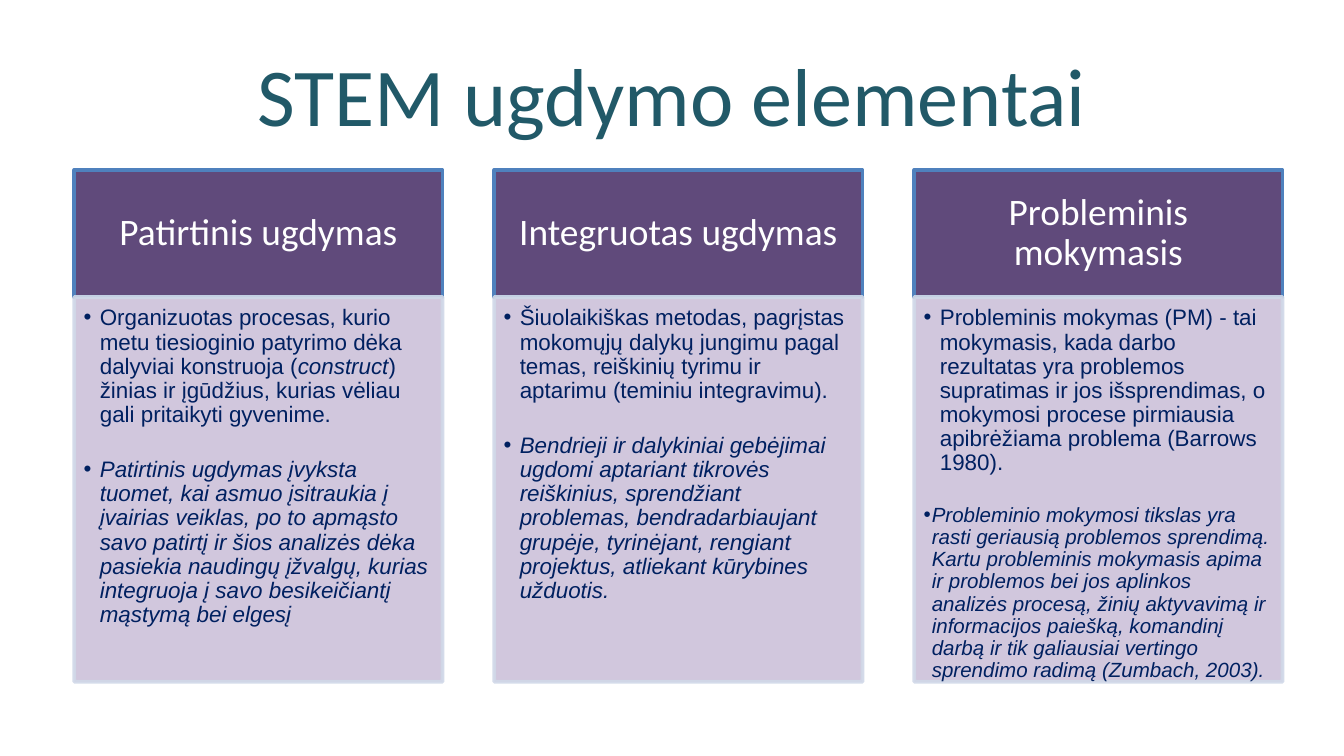
from dataclasses import dataclass

from lxml import etree
from pptx import Presentation
from pptx import util as u
from pptx.dml.color import RGBColor
from pptx.enum import shapes, text
from pptx.oxml.ns import qn


@dataclass(frozen=True)
class Theme:
    title: str = "215968"
    header: str = "604A7B"
    header_line: str = "4F81BD"
    header_text: str = "FFFFFF"
    panel: str = "CCC1DA"
    panel_line: str = "D0D8E8"
    panel_text: str = "002060"
    head_font: str = "Calibri"
    body_font: str = "Arial"
    title_size: int = 44
    header_size: int = 20
    line_width: int = 2
    line_spacing: float = 0.9
    panel_opacity: int = 90


@dataclass(frozen=True)
class Point:
    spans: tuple  # (words, italic) pairs
    size: int = 12
    indent: float = 0.12
    after: float = 0


class SlideBuilder:
    """Places styled elements, with lengths in percent of the slide."""

    def __init__(self, deck, theme):
        self.deck, self.theme = deck, theme
        self.slide = deck.slides.add_slide(deck.slide_layouts[5])

    def area(self, left, top, width, height):
        across, down = self.deck.slide_width, self.deck.slide_height
        return [round(share * side / 100) for share, side in
                ((left, across), (top, down), (width, across), (height, down))]

    def style(self, span, font, size, color, italic=False):
        span.font.name, span.font.size = font, u.Pt(size)
        span.font.color.rgb = RGBColor.from_string(color)
        span.font.italic = italic

    def title(self, words, *place):
        box = self.slide.shapes.title
        box.left, box.top, box.width, box.height = self.area(*place)
        frame = box.text_frame
        frame.text = words
        frame.vertical_anchor = text.MSO_ANCHOR.MIDDLE
        para = frame.paragraphs[0]
        para.alignment = text.PP_ALIGN.CENTER
        self.style(para.runs[0], self.theme.head_font,
                   self.theme.title_size, self.theme.title)

    def block(self, place, fill, line, insets, opacity=100):
        box = self.slide.shapes.add_shape(
            shapes.MSO_SHAPE.RECTANGLE, *self.area(*place))
        box.shadow.inherit = False
        box.line.width = u.Pt(self.theme.line_width)
        for paint, color in ((box.fill, fill), (box.line.fill, line)):
            paint.solid()
            paint.fore_color.rgb = RGBColor.from_string(color)
        if opacity < 100:
            for tone in box._element.spPr.iter(qn("a:srgbClr")):
                etree.SubElement(tone, qn("a:alpha"), val=str(opacity * 1000))
        frame = box.text_frame
        frame.word_wrap = True
        (frame.margin_left, frame.margin_top,
         frame.margin_right, frame.margin_bottom) = map(u.Inches, insets)
        return frame

    def header(self, words, *place):
        theme = self.theme
        frame = self.block(place, theme.header, theme.header_line,
                           (0.16, 0.09, 0.16, 0.09))
        frame.text = words
        frame.vertical_anchor = text.MSO_ANCHOR.MIDDLE
        para = frame.paragraphs[0]
        para.alignment = text.PP_ALIGN.CENTER
        para.line_spacing = theme.line_spacing
        self.style(para.runs[0], theme.head_font,
                   theme.header_size, theme.header_text)

    def panel(self, points, *place):
        theme = self.theme
        frame = self.block(place, theme.panel, theme.panel_line,
                           (0.07, 0.07, 0.09, 0.1), theme.panel_opacity)
        frame.vertical_anchor = text.MSO_ANCHOR.TOP
        for index, point in enumerate(points):
            para = frame.add_paragraph() if index else frame.paragraphs[0]
            para.alignment = text.PP_ALIGN.LEFT
            para.line_spacing = theme.line_spacing
            para.space_after = u.Pt(point.after)
            self.bullet(para, point.indent)
            for words, italic in point.spans:
                span = para.add_run()
                span.text = words
                self.style(span, theme.body_font, point.size,
                           theme.panel_text, italic)

    def bullet(self, para, indent):
        props = para._p.get_or_add_pPr()
        props.set("marL", str(u.Inches(indent)))
        props.set("indent", str(-u.Inches(indent)))
        etree.SubElement(props, qn("a:buFont"), typeface=self.theme.body_font)
        etree.SubElement(props, qn("a:buChar"), char="•")


# Content: a heading and two points for each column
COLUMNS = [
    ("Patirtinis ugdymas", [
        Point((("Organizuotas procesas, kurio metu tiesioginio patyrimo dėka "
                "dalyviai konstruoja (", False),
               ("construct", True),
               (") žinias ir įgūdžius, kurias vėliau gali pritaikyti "
                "gyvenime.", False)), after=16.5),
        Point((("Patirtinis ugdymas įvyksta tuomet, kai asmuo įsitraukia į "
                "įvairias veiklas, po to apmąsto savo patirtį ir šios "
                "analizės dėka pasiekia naudingų įžvalgų, kurias integruoja "
                "į savo besikeičiantį mąstymą bei elgesį", True),)),
    ]),
    ("Integruotas ugdymas", [
        Point((("Šiuolaikiškas metodas, pagrįstas mokomųjų dalykų jungimu "
                "pagal temas, reiškinių tyrimu ir aptarimu (teminiu "
                "integravimu).", False),), after=16.5),
        Point((("Bendrieji ir dalykiniai gebėjimai ugdomi aptariant tikrovės "
                "reiškinius, sprendžiant problemas, bendradarbiaujant "
                "grupėje, tyrinėjant, rengiant projektus, atliekant "
                "kūrybines užduotis.", True),)),
    ]),
    ("Probleminis mokymasis", [
        Point((("Probleminis mokymas (PM) - tai mokymasis, kada darbo "
                "rezultatas yra problemos supratimas ir jos išsprendimas, o "
                "mokymosi procese pirmiausia apibrėžiama problema (Barrows "
                "1980).", False),), after=15.5),
        Point((("Probleminio mokymosi tikslas yra rasti geriausią problemos "
                "sprendimą. Kartu probleminis mokymasis apima ir problemos "
                "bei jos aplinkos analizės procesą, žinių aktyvavimą ir "
                "informacijos paiešką, komandinį darbą ir tik galiausiai "
                "vertingo sprendimo radimą (Zumbach, 2003).", True),),
              size=11, indent=0.06),
    ]),
]

# Column grid, in percent of the slide
LEFT, PITCH, WIDTH = 5.53, 31.25, 27.4
TOP, HEADER_HEIGHT, PANEL_HEIGHT = 22.5, 16.8, 50.9


def main():
    deck = Presentation()
    deck.slide_width = u.Inches(10)
    deck.slide_height = deck.slide_width * 9 // 16
    page = SlideBuilder(deck, Theme())
    page.title("STEM ugdymo elementai", 5, 4, 90, 16.7)
    for index, (heading, points) in enumerate(COLUMNS):
        left = LEFT + index * PITCH
        page.header(heading, left, TOP, WIDTH, HEADER_HEIGHT)
        page.panel(points, left, TOP + HEADER_HEIGHT, WIDTH, PANEL_HEIGHT)
    deck.save("out.pptx")


if __name__ == "__main__":
    main()
